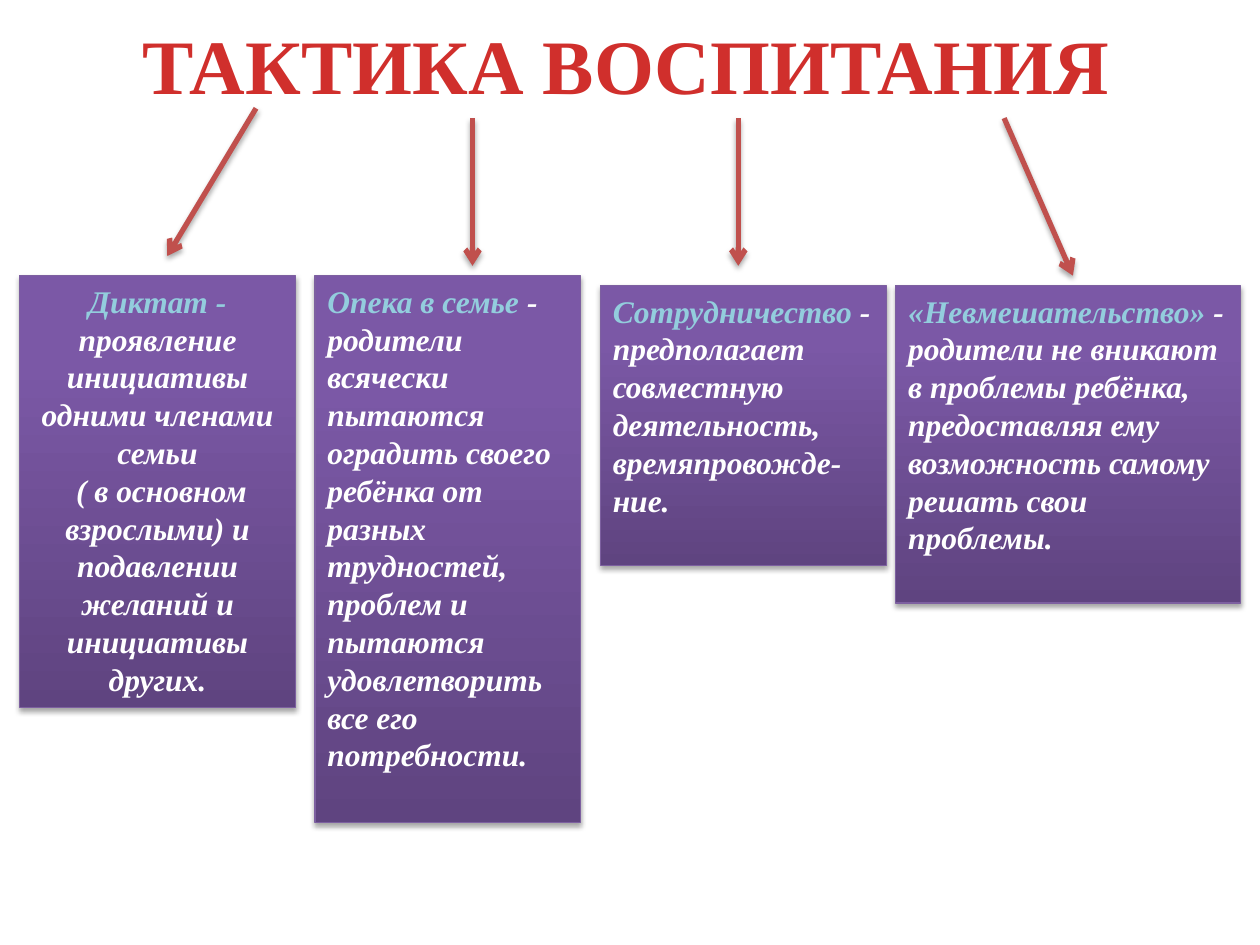
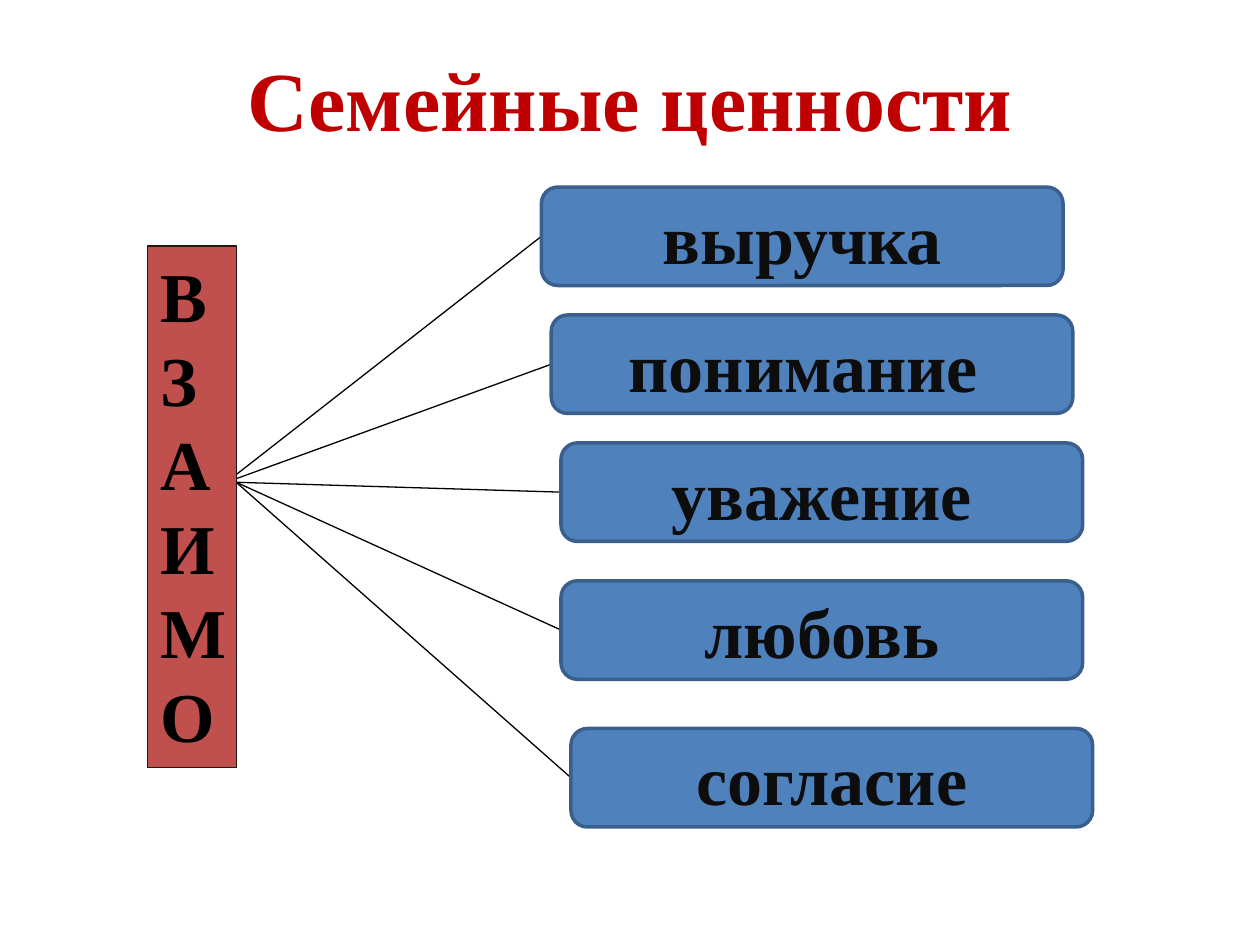
from lxml.etree import SubElement
from pptx import Presentation
from pptx.dml.color import RGBColor
from pptx.enum.shapes import MSO_CONNECTOR, MSO_SHAPE
from pptx.enum.text import MSO_ANCHOR, MSO_AUTO_SIZE, PP_ALIGN
from pptx.oxml.ns import qn
from pptx.util import Pt

FONT = "Times New Roman"
COLORS = {
    "title": "C00000", "term": "93CDDD", "white": "FFFFFF", "black": "000000",
    "card_line": "7D60A0", "red": "C0504D", "column_line": "1E1C11",
    "value": "4F81BD", "value_line": "3A5F8C", "value_text": "0D0D0D",
}
TITLE_STOPS = [(0, "FC7C7A"), (75, "D02F2C"), (100, "C70500")]
CARD_STOPS = [(0, "5F4480"), (80, "7B58A6"), (100, "7C57A8")]


def rgb(name):
    return RGBColor.from_string(COLORS[name])


def set_gradient(fill, element, stops, angle):
    fill.gradient()
    fill.gradient_angle = angle
    gs_list = element.find(".//" + qn("a:gsLst"))
    for gs in list(gs_list):
        gs_list.remove(gs)
    for position, color in stops:
        gs = SubElement(gs_list, qn("a:gs"), pos=str(position * 1000))
        SubElement(gs, qn("a:srgbClr"), val=color)


def set_effects(sp, shadow):
    sp_pr = sp._element.spPr
    effects = sp_pr.find(qn("a:effectLst"))
    if effects is None:
        effects = SubElement(sp_pr, qn("a:effectLst"))
    if shadow:
        outer = SubElement(effects, qn("a:outerShdw"), blurRad=str(Pt(3.1)),
                           dist=str(Pt(1.8)), dir="5400000", rotWithShape="0")
        color = SubElement(outer, qn("a:srgbClr"), val=COLORS["black"])
        SubElement(color, qn("a:alpha"), val="35000")


def add_run(p, text, size, color=None, italic=False):
    r = p.add_run()
    r.text = text
    r.font.name = FONT
    r.font.size = Pt(size)
    r.font.bold = True
    r.font.italic = italic
    if color:
        r.font.color.rgb = rgb(color)
    return r


def add_title(slide, text, box, size, color=None):
    sp = slide.shapes.title
    sp.left, sp.top, sp.width, sp.height = [Pt(v) for v in box]
    tf = sp.text_frame
    tf.vertical_anchor = MSO_ANCHOR.MIDDLE
    p = tf.paragraphs[0]
    p.alignment = PP_ALIGN.CENTER
    return add_run(p, text, size, color)


def add_box(slide, kind, box, line, weight, fill=None):
    sp = slide.shapes.add_shape(kind, *[Pt(v) for v in box])
    sp.shadow.inherit = False
    if fill:
        sp.fill.solid()
        sp.fill.fore_color.rgb = rgb(fill)
    sp.line.color.rgb = rgb(line)
    sp.line.width = Pt(weight)
    sp.text_frame.word_wrap = True
    return sp


def add_paragraphs(sp, paragraphs, size, align=PP_ALIGN.LEFT, italic=False, grow=True):
    tf = sp.text_frame
    tf.vertical_anchor = MSO_ANCHOR.TOP if grow else MSO_ANCHOR.MIDDLE
    if grow:
        tf.auto_size = MSO_AUTO_SIZE.SHAPE_TO_FIT_TEXT
    for i, runs in enumerate(paragraphs):
        p = tf.add_paragraph() if i else tf.paragraphs[0]
        p.alignment = align
        for text, color in runs:
            add_run(p, text, size, color, italic)


def add_card(slide, box, paragraphs, align=PP_ALIGN.LEFT):
    sp = add_box(slide, MSO_SHAPE.RECTANGLE, box, "card_line", 0.75)
    set_gradient(sp.fill, sp._element.spPr, CARD_STOPS, 90)
    set_effects(sp, shadow=True)
    add_paragraphs(sp, paragraphs, 18, align, italic=True)


def add_line(slide, start, end, color, weight, arrow=False):
    cn = slide.shapes.add_connector(
        MSO_CONNECTOR.STRAIGHT, *[Pt(v) for v in (*start, *end)])
    cn.line.color.rgb = rgb(color)
    cn.line.width = Pt(weight)
    if arrow:
        SubElement(cn._element.spPr.find(qn("a:ln")), qn("a:tailEnd"), type="arrow")
    set_effects(cn, shadow=arrow)


def build_tactics(slide):
    r = add_title(slide, "ТАКТИКА ВОСПИТАНИЯ", (33.8, 0, 648, 73.4), 44)
    set_gradient(r.font.fill, r._r, TITLE_STOPS, 270)

    add_card(slide, (11.3, 157.5, 157.5, 247), [
        [("Диктат - ", "term"),
         ("проявление инициативы одними членами семьи", "white")],
        [(" ( в основном взрослыми) и подавлении желаний и инициативы других.",
          "white")],
    ], PP_ALIGN.CENTER)
    cards = [
        ((180, 157.5, 151.9, 312.5), "Опека в семье ",
         "- родители всячески пытаются оградить своего ребёнка от разных "
         "трудностей, проблем и пытаются удовлетворить все его потребности."),
        ((343.1, 163.1, 163.5, 160), "Сотрудничество",
         " - предполагает совместную деятельность, времяпровожде-ние."),
        ((511.9, 163.1, 196.9, 181.5), "«Невмешательство» ",
         "- родители не вникают в проблемы ребёнка, предоставляя ему "
         "возможность самому решать свои проблемы."),
    ]
    for box, term, meaning in cards:
        add_card(slide, box, [[(term, "term"), (meaning, "white")]])

    arrows = [((146.3, 61.9), (95.6, 146.3)), ((270, 67.5), (270, 151.9)),
              ((421.9, 67.5), (421.9, 151.9)), ((573.8, 67.5), (613.1, 157.5))]
    for start, end in arrows:
        add_line(slide, start, end, "red", 3, arrow=True)


def build_values(slide):
    add_title(slide, "Семейные ценности", (36, 16.5, 648, 78.7), 48, "title")
    width, height, hub_y = 298.1, 56.3, 275.6
    values = [
        ("выручка", 309.4, 106.9, 129.4), ("понимание ", 315, 180, 129.4),
        ("уважение", 320.6, 253.1, 135), ("любовь", 320.6, 331.9, 135),
        ("согласие", 326.3, 416.3, 135),
    ]
    for _, left, top, hub_x in values:
        add_line(slide, (hub_x, hub_y), (left, top + height / 2), "black", 0.75)

    column = add_box(slide, MSO_SHAPE.RECTANGLE, (84.4, 140.6, 50.6, 298),
                     "column_line", 0.75, "red")
    add_paragraphs(column, [[("В", "black")], [("ЗАИМО", "black")]], 40)

    for text, left, top, _ in values:
        sp = add_box(slide, MSO_SHAPE.ROUNDED_RECTANGLE, (left, top, width, height),
                     "value_line", 2, "value")
        add_paragraphs(sp, [[(text, "value_text")]], 40, PP_ALIGN.CENTER, grow=False)


def main():
    prs = Presentation()
    prs.slide_width, prs.slide_height = Pt(720), Pt(540)
    for build in (build_tactics, build_values):
        build(prs.slides.add_slide(prs.slide_layouts[5]))
    prs.save("out.pptx")


if __name__ == "__main__":
    main()
